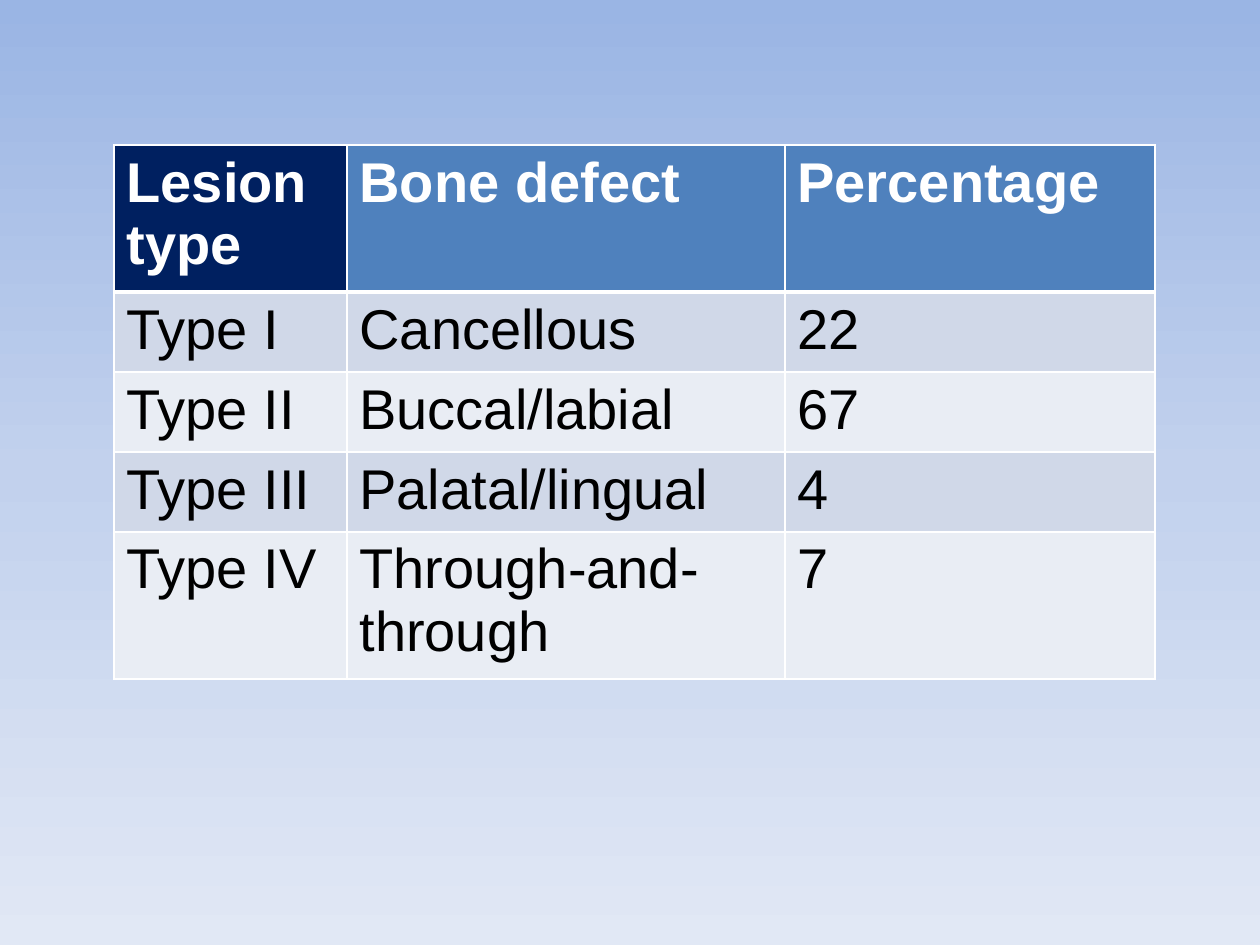
from copy import deepcopy

from lxml import etree
from pptx import Presentation
from pptx import util as u
from pptx.dml.color import RGBColor
from pptx.oxml import ns

PX = 914400 // 126  # EMU per px
WHITE = RGBColor(0xFF, 0xFF, 0xFF)
BLACK = RGBColor(0x00, 0x00, 0x00)
NAVY = RGBColor(0x00, 0x20, 0x60)
BLUE = RGBColor(0x4F, 0x81, 0xBD)
BANDS = [RGBColor(0xD0, 0xD8, 0xE8), RGBColor(0xE9, 0xED, 0xF4)]
SKY = [RGBColor(0x9A, 0xB5, 0xE4), RGBColor(0xC2, 0xD1, 0xED), RGBColor(0xE1, 0xE8, 0xF5)]

COLUMNS = [233, 438, 370]
HEIGHTS = [147, 80, 80, 80, 147]
LESIONS = [
    ["Lesion type", "Bone defect", "Percentage"],
    ["Type I", "Cancellous", "22"],
    ["Type II", "Buccal/labial", "67"],
    ["Type III", "Palatal/lingual", "4"],
    ["Type IV", "Through-and-through", "7"],
]


def px(length):
    return u.Emu(length * PX)


def paint_background(page):
    """Vertical gradient with evenly spaced stops."""
    fill = page.background.fill
    fill.gradient()
    fill.gradient_angle = 270
    stops = page.element.find(".//" + ns.qn("a:gsLst"))
    stops.append(deepcopy(stops[-1]))
    for i, (stop, color) in enumerate(zip(fill.gradient_stops, SKY)):
        stop.position = i / (len(SKY) - 1)
        stop.color.rgb = color


def add_border(cell, side, points):
    properties = cell._tc.get_or_add_tcPr()
    line = etree.SubElement(properties, ns.qn(f"a:ln{side}"), w=str(u.Pt(points)))
    solid = etree.SubElement(line, ns.qn("a:solidFill"))
    etree.SubElement(solid, ns.qn("a:srgbClr"), val=str(WHITE))


def format_cell(cell, words, row, column):
    header = row == 0
    # Borders, with a thick rule under the header
    widths = {"L": 1, "R": 1, "T": 3 if row == 1 else 1, "B": 3 if header else 1}
    for side, points in widths.items():
        add_border(cell, side, points)
    # Fill
    cell.fill.solid()
    if header:
        cell.fill.fore_color.rgb = NAVY if column == 0 else BLUE
    else:
        cell.fill.fore_color.rgb = BANDS[(row - 1) % 2]
    # Text
    cell.text_frame.text = words
    font = cell.text_frame.paragraphs[0].runs[0].font
    font.name = "Arial"
    font.size = u.Pt(32)
    font.bold = header
    font.color.rgb = WHITE if header else BLACK


def add_lesion_table(page, left, top):
    frame = page.shapes.add_table(len(HEIGHTS), len(COLUMNS), px(left), px(top),
                                  px(sum(COLUMNS)), px(sum(HEIGHTS)))
    table = frame.table
    for column, width in zip(table.columns, COLUMNS):
        column.width = px(width)
    for row, height in zip(table.rows, HEIGHTS):
        row.height = px(height)
    for i, entries in enumerate(LESIONS):
        for j, words in enumerate(entries):
            format_cell(table.cell(i, j), words, i, j)


def main():
    deck = Presentation()
    deck.slide_width, deck.slide_height = px(1260), px(945)
    page = deck.slides.add_slide(deck.slide_layouts[6])
    paint_background(page)
    add_lesion_table(page, 114, 145)
    deck.save("out.pptx")


if __name__ == "__main__":
    main()
